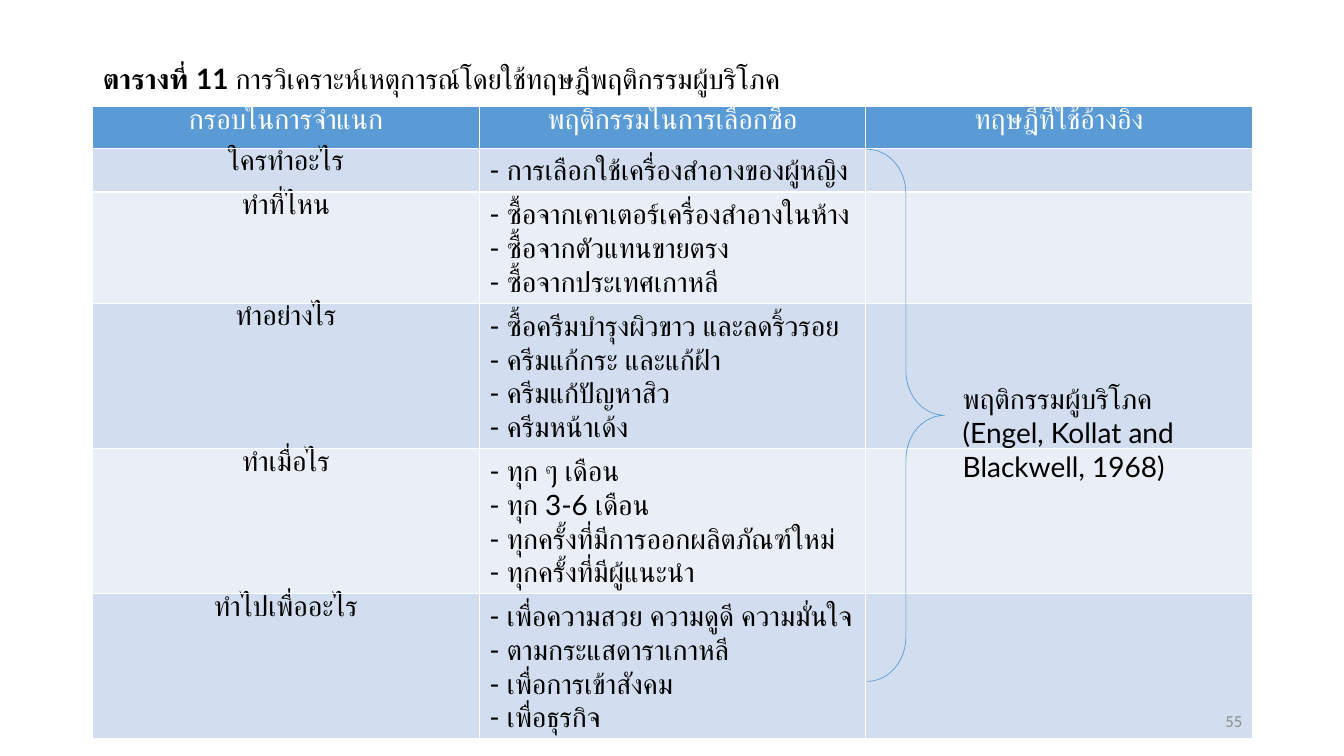
from pptx import Presentation
from pptx.dml.color import RGBColor
from pptx.enum.shapes import MSO_SHAPE
from pptx.enum.text import MSO_ANCHOR, PP_ALIGN
from pptx.util import Inches, Pt

HEADERS = ["กรอบในการจำแนก", "พฤติกรรมในการเลือกซื้อ", "ทฤษฎีที่ใช้อ้างอิง"]
BEHAVIOURS = [
    ("ใครทำอะไร", ["การเลือกใช้เครื่องสำอางของผู้หญิง"]),
    ("ทำที่ไหน", ["ซื้อจากเคาเตอร์เครื่องสำอางในห้าง", "ซื้อจากตัวแทนขายตรง",
                 "ซื้อจากประเทศเกาหลี"]),
    ("ทำอย่างไร", ["ซื้อครีมบำรุงผิวขาว และลดริ้วรอย", "ครีมแก้กระ และแก้ฝ้า",
                  "ครีมแก้ปัญหาสิว", "ครีมหน้าเด้ง"]),
    ("ทำเมื่อไร", ["ทุก ๆ เดือน", "ทุก 3-6 เดือน",
                 "ทุกครั้งที่มีการออกผลิตภัณฑ์ใหม่", "ทุกครั้งที่มีผู้แนะนำ"]),
    ("ทำไปเพื่ออะไร", ["เพื่อความสวย ความดูดี ความมั่นใจ", "ตามกระแสดาราเกาหลี",
                     "เพื่อการเข้าสังคม", "เพื่อธุรกิจ"]),
]
BLUE = "5B9BD5"
BANDS = ["D2DEEF", "EAEFF7"]


def rgb(color):
    return RGBColor.from_string(color)


def write(text_frame, lines, color="000000", align=PP_ALIGN.LEFT, size=20, font="Lato"):
    """Fill a text frame with one uniformly formatted paragraph per line."""
    text_frame.word_wrap = True
    text_frame.text = "\n".join(lines)
    for paragraph in text_frame.paragraphs:
        paragraph.alignment = align
        paragraph.font.size = Pt(size)
        paragraph.font.name = font
        paragraph.font.bold = False
        paragraph.font.color.rgb = rgb(color)


presentation = Presentation()
presentation.slide_width = Inches(13.33)
presentation.slide_height = Inches(7.5)
slide = presentation.slides.add_slide(presentation.slide_layouts[5])

# Title
title = slide.shapes.title
title.left, title.top = Inches(0.92), Inches(0.4)
title.width, title.height = Inches(11.5), Inches(0.8)
write(title.text_frame, ["ตารางที่ 11 "])
title.text_frame.vertical_anchor = MSO_ANCHOR.MIDDLE
heading = title.text_frame.paragraphs[0]
heading.line_spacing = 0.9
heading.runs[0].font.bold = True
heading.add_run().text = "การวิเคราะห์เหตุการณ์โดยใช้ทฤษฎีพฤติกรรมผู้บริโภค"

# Table
table = slide.shapes.add_table(len(BEHAVIOURS) + 1, len(HEADERS), Inches(0.92), Inches(1.06),
                               Inches(11.5), Inches(6.27)).table
table.rows[0].height = Inches(0.41)
for cell, header in zip(table.rows[0].cells, HEADERS):
    cell.margin_top = cell.margin_bottom = 0
    cell.fill.solid()
    cell.fill.fore_color.rgb = rgb(BLUE)
    write(cell.text_frame, [header], "FFFFFF", PP_ALIGN.CENTER)

for index, (question, answers) in enumerate(BEHAVIOURS):
    row = table.rows[index + 1]
    row.height = Inches(0.1 + 0.335 * len(answers))
    for cell in row.cells:
        cell.fill.solid()
        cell.fill.fore_color.rgb = rgb(BANDS[index % 2])
    question_cell, answer_cell, theory_cell = row.cells
    question_cell.margin_top = question_cell.margin_bottom = 0
    write(question_cell.text_frame, [question], align=PP_ALIGN.CENTER)
    write(answer_cell.text_frame, [f"- {answer}" for answer in answers])
    write(theory_cell.text_frame, [""])

# Brace leading to the theory
brace = slide.shapes.add_shape(MSO_SHAPE.RIGHT_BRACE, Inches(8.6), Inches(1.48),
                               Inches(0.77), Inches(5.28))
brace.adjustments[0] = 0.57
brace.adjustments[1] = 0.5
brace.shadow.inherit = False
brace.fill.background()
brace.line.color.rgb = rgb(BLUE)
brace.line.width = Pt(0.5)

theory = slide.shapes.add_textbox(Inches(9.45), Inches(3.74), Inches(2.4), Inches(0.77))
theory.width = Inches(2.97)
write(theory.text_frame, ["พฤติกรรมผู้บริโภค", "(Engel, Kollat and Blackwell, 1968)"])

# Slide number
number = slide.shapes.add_textbox(Inches(9.42), Inches(6.95), Inches(3), Inches(0.4))
write(number.text_frame, ["55"], "8C8C8C", PP_ALIGN.RIGHT, 12, "Calibri")
number.text_frame.vertical_anchor = MSO_ANCHOR.MIDDLE

presentation.save("out.pptx")
